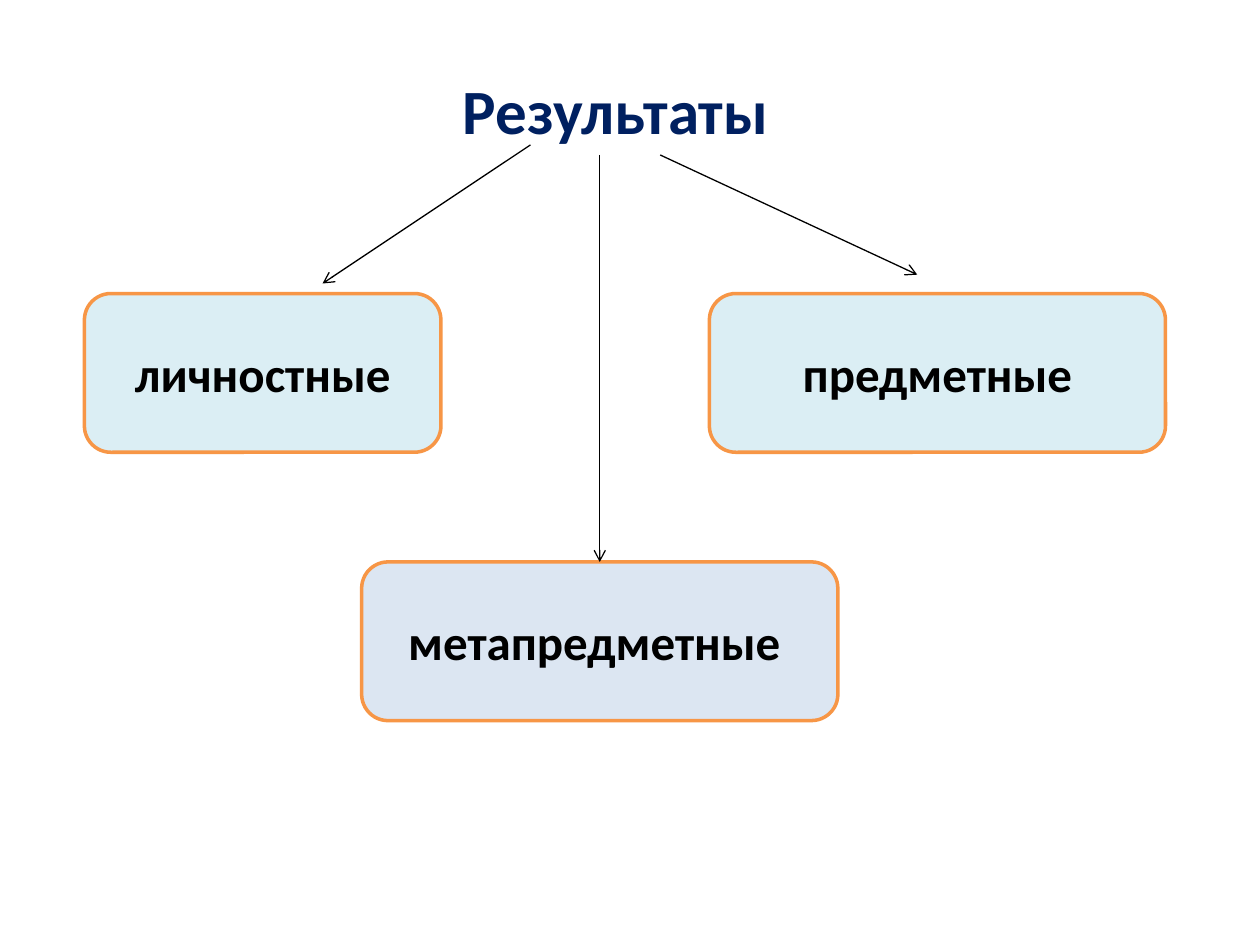
from dataclasses import dataclass
from typing import Optional

from lxml import etree
from pptx import Presentation
from pptx.dml.color import RGBColor
from pptx.enum.shapes import MSO_CONNECTOR, MSO_SHAPE
from pptx.enum.text import MSO_ANCHOR, PP_ALIGN
from pptx.oxml.ns import qn
from pptx.util import Inches, Pt

ROUNDED = MSO_SHAPE.ROUNDED_RECTANGLE
STRAIGHT = MSO_CONNECTOR.STRAIGHT
MIDDLE, TOP = MSO_ANCHOR.MIDDLE, MSO_ANCHOR.TOP
CENTER = PP_ALIGN.CENTER
TOP_SIDE = 0

WIDTH, HEIGHT = Inches(10), Inches(7.5)
COLUMNS, ROWS = 100, 75
BOX_ROWS = 12.6
UPPER_ROW, LOWER_ROW = 23.3, 44.6
FONT = "Calibri"
NAVY, BLACK, ORANGE = "002060", "000000", "F79646"
AQUA, PALE_BLUE = "DBEEF4", "DCE6F2"


@dataclass(frozen=True)
class Result:
    """A kind of result and the arrow that leads to it, in grid units."""

    label: str
    column: float
    row: float
    columns: float
    fill: str
    arrow_start: tuple[float, float]
    arrow_end: Optional[tuple[float, float]] = None


RESULTS = (
    Result("личностные", 6.7, UPPER_ROW, 28.3, AQUA, (42.1, 11.5), (25.6, 22.5)),
    Result("метапредметные ", 28.7, LOWER_ROW, 37.8, PALE_BLUE, (47.6, 12.3)),
    Result("предметные", 56.3, UPPER_ROW, 36.2, AQUA, (52.4, 12.3), (72.8, 21.8)),
)


def across(columns: float) -> int:
    """Return the length of a number of grid columns."""
    return round(WIDTH * columns / COLUMNS)


def down(rows: float) -> int:
    """Return the length of a number of grid rows."""
    return round(HEIGHT * rows / ROWS)


def color(value: str) -> RGBColor:
    """Turn a hex string into a colour."""
    return RGBColor.from_string(value)


def write(shape, text: str, *, size: float, ink: str, anchor=MIDDLE) -> None:
    """Put centred bold text into a shape."""
    frame = shape.text_frame
    frame.word_wrap = True
    frame.vertical_anchor = anchor
    paragraph = frame.paragraphs[0]
    paragraph.alignment = CENTER
    run = paragraph.add_run()
    run.text = text
    run.font.name = FONT
    run.font.size = Pt(size)
    run.font.bold = True
    run.font.color.rgb = color(ink)


def draw_box(slide, result: Result):
    """Draw the rounded box of a result."""
    box = slide.shapes.add_shape(
        ROUNDED, across(result.column), down(result.row),
        across(result.columns), down(BOX_ROWS),
    )
    box.shadow.inherit = False
    box.fill.solid()
    box.fill.fore_color.rgb = color(result.fill)
    box.line.color.rgb = color(ORANGE)
    box.line.width = Pt(2)
    write(box, result.label, size=28, ink=BLACK)
    return box


def draw_arrow(slide, result: Result, box) -> None:
    """Draw the arrow to a result, joined to its box when no end is given."""
    start_column, start_row = result.arrow_start
    end_column, end_row = result.arrow_end or result.arrow_start
    arrow = slide.shapes.add_connector(
        STRAIGHT, across(start_column), down(start_row),
        across(end_column), down(end_row),
    )
    if result.arrow_end is None:
        arrow.end_connect(box, TOP_SIDE)
    arrow.line.color.rgb = color(BLACK)
    arrow.line.width = Pt(0.75)
    etree.SubElement(arrow.line._get_or_add_ln(), qn("a:tailEnd"), type="arrow")
    etree.SubElement(arrow._element.spPr, qn("a:effectLst"))


def main() -> None:
    """Build the slide and save it."""
    deck = Presentation()
    deck.slide_width, deck.slide_height = WIDTH, HEIGHT
    slide = deck.slides.add_slide(deck.slide_layouts[6])
    heading = slide.shapes.add_textbox(across(8.3), down(5.2), across(81.1), down(7.1))
    write(heading, "Результаты", size=36, ink=NAVY, anchor=TOP)
    boxes = [draw_box(slide, result) for result in RESULTS]
    for result, box in zip(RESULTS, boxes):
        draw_arrow(slide, result, box)
    deck.save("out.pptx")


if __name__ == "__main__":
    main()
